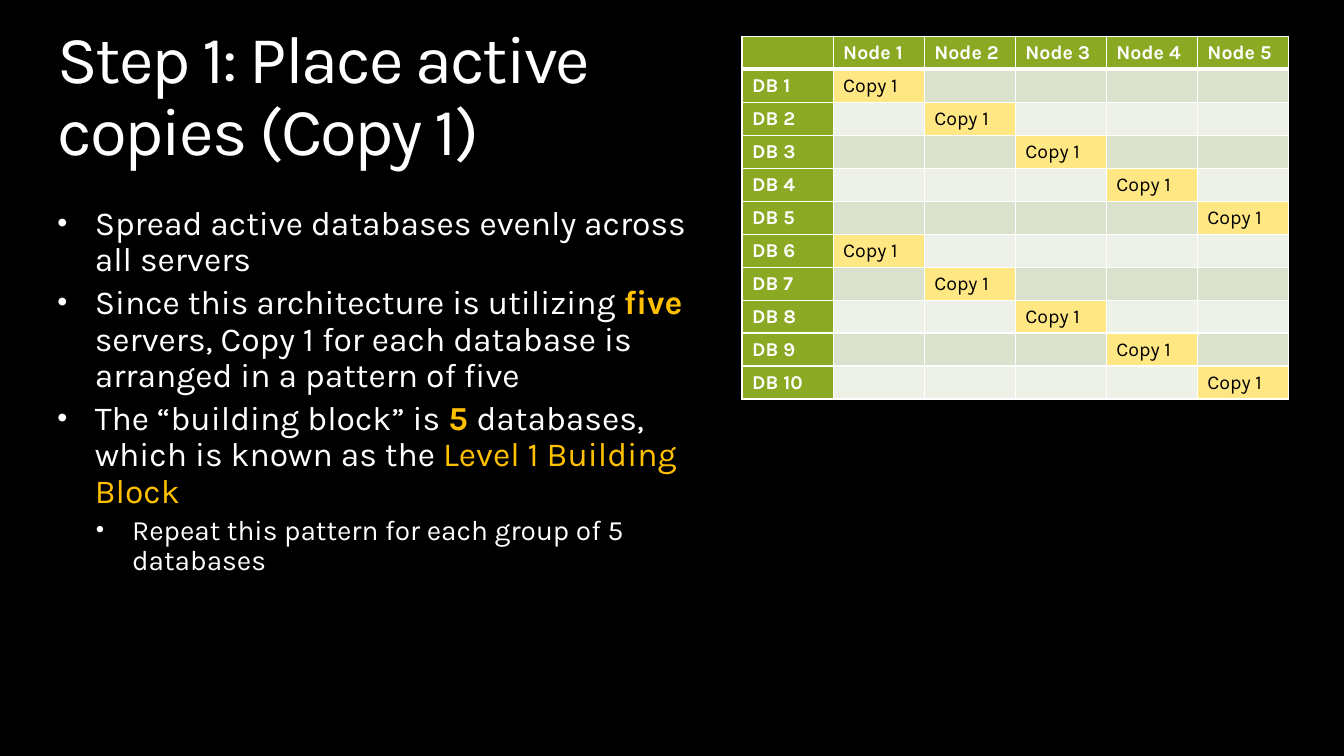
"""Build the slide on placing active database copies across five nodes."""
from lxml import etree
from pptx import Presentation
from pptx.dml.color import RGBColor
from pptx.oxml.ns import qn
from pptx.util import Inches, Pt

FONT = "Karla"
WHITE, BLACK, GOLD = "FFFFFF", "000000", "FFC000"
GREEN, YELLOW = "8CA923", "FFE784"
BANDS = ("EEF1E8", "DAE2CD")

TITLE = "Step 1: Place active\vcopies (Copy 1)"
BULLETS = [
    (0, [("Spread active databases evenly across all servers", WHITE, False)]),
    (0, [("Since this architecture is utilizing ", WHITE, False),
         ("five ", GOLD, True),
         ("servers, Copy 1 for each database is arranged in a pattern of five", WHITE, False)]),
    (0, [("The “building block” is ", WHITE, False),
         ("5 ", GOLD, True),
         ("databases, which is known as the ", WHITE, False),
         ("Level 1 Building Block", GOLD, False)]),
    (1, [("Repeat this pattern for each group of 5 databases", WHITE, False)]),
]
LEVELS = [(24, 0.37, 0.37), (20, 0.74, 0.36)]
NODES = 5
BLOCKS = [(10, range(6, 11)), (5, range(1, 6))]
TABLE_LEFT, TABLE_TOP, TABLE_WIDTH = 7.36, 0.36, 5.42
ROW_HEIGHT = 3.6 / 11


def color(value):
    return RGBColor.from_string(value)


def set_font(font, size, value, bold=False):
    font.name = FONT
    font.size = Pt(size)
    font.bold = bold
    font.color.rgb = color(value)


def add_text_box(page, *area):
    frame = page.shapes.add_textbox(*map(Inches, area)).text_frame
    frame.word_wrap = True
    frame.margin_left = frame.margin_top = frame.margin_right = frame.margin_bottom = 0
    return frame


def add_title(page):
    para = add_text_box(page, 0.57, 0.25, 12.19, 1.45).paragraphs[0]
    para.text = TITLE
    para.line_spacing = 0.9
    set_font(para.font, 48, WHITE)
    for span in para.runs:
        span._r.get_or_add_rPr().set("spc", "-150")


def add_bullets(page):
    frame = add_text_box(page, 0.57, 2.05, 6.28, 3.72)
    for index, (level, spans) in enumerate(BULLETS):
        size, margin, hanging = LEVELS[level]
        para = frame.add_paragraph() if index else frame.paragraphs[0]
        para.level = level
        para.line_spacing = 0.9
        if index:
            para.space_before = Pt(size * 0.2)
        props = para._p.get_or_add_pPr()
        props.set("marL", str(Inches(margin)))
        props.set("indent", str(-Inches(hanging)))
        etree.SubElement(props, qn("a:buSzPct"), val="85000")
        etree.SubElement(props, qn("a:buFont"), typeface="Arial")
        etree.SubElement(props, qn("a:buChar"), char="•")
        set_font(para.font, size, WHITE)
        for text, value, bold in spans:
            span = para.add_run()
            span.text = text
            if value != WHITE:
                span.font.color.rgb = color(value)
            if bold:
                span.font.bold = True


def set_borders(cell, top, bottom):
    props = cell._tc.get_or_add_tcPr()
    for side, width in (("L", 1), ("R", 1), ("T", top), ("B", bottom)):
        line = etree.SubElement(props, qn("a:ln" + side), w=str(Pt(width)))
        fill = etree.SubElement(line, qn("a:solidFill"))
        etree.SubElement(fill, qn("a:srgbClr"), val=WHITE)


def cell_content(row, column, marked):
    if row == 0:
        return f"Node {column}" if column else "", GREEN
    if column == 0:
        return f"DB {row}", GREEN
    band = BANDS[row % 2]
    if column == (row - 1) % NODES + 1:
        return "Copy 1", YELLOW if row in marked else band
    return "", band


def add_copy_table(page, databases, marked):
    rows, columns = databases + 1, NODES + 1
    area = (TABLE_LEFT, TABLE_TOP, TABLE_WIDTH, rows * ROW_HEIGHT)
    table = page.shapes.add_table(rows, columns, *map(Inches, area)).table
    for row in range(rows):
        for column in range(columns):
            cell = table.cell(row, column)
            text, fill = cell_content(row, column, marked)
            set_borders(cell, 3 if row == 1 else 1, 3 if row == 0 else 1)
            cell.fill.solid()
            cell.fill.fore_color.rgb = color(fill)
            para = cell.text_frame.paragraphs[0]
            para.text = text
            heading = fill == GREEN
            set_font(para.font, 14, WHITE if heading else BLACK, heading)


def main():
    deck = Presentation()
    deck.slide_width, deck.slide_height = Inches(13.33), Inches(7.5)
    page = deck.slides.add_slide(deck.slide_layouts[6])
    page.background.fill.solid()
    page.background.fill.fore_color.rgb = color(BLACK)
    for databases, marked in BLOCKS:
        add_copy_table(page, databases, marked)
    add_title(page)
    add_bullets(page)
    deck.save("out.pptx")


if __name__ == "__main__":
    main()
